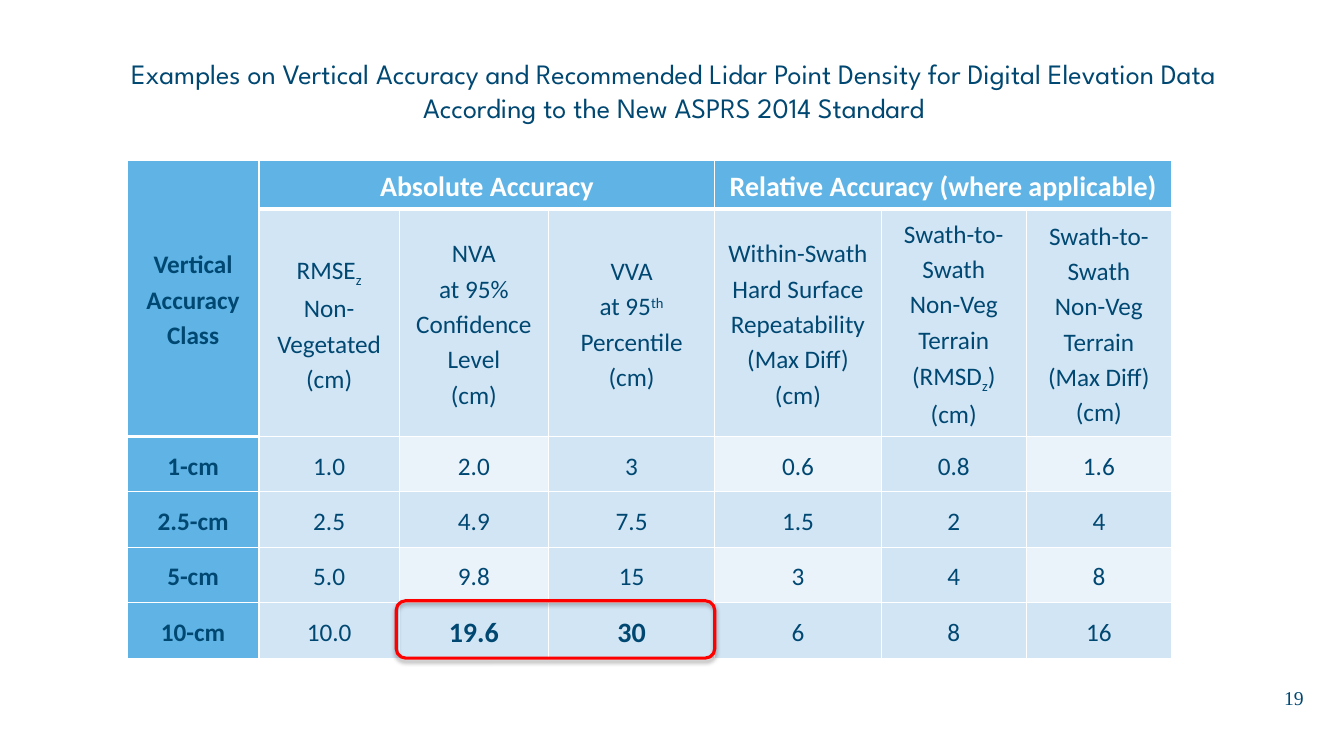
from lxml.etree import SubElement
from pptx import Presentation
from pptx.dml.color import RGBColor
from pptx.enum.shapes import MSO_SHAPE
from pptx.enum.text import MSO_ANCHOR, MSO_AUTO_SIZE, PP_ALIGN
from pptx.oxml.ns import qn
from pptx.util import Inches, Pt

COLORS = {"navy": "004872", "blue": "5FB4E5", "pale": "D2E5F5",
          "paler": "EAF2FA", "white": "FFFFFF", "red": "FF0000", "black": "000000"}

COL_WIDTHS = [1.31, 1.39, 1.48, 1.65, 1.65, 1.44, 1.44]
ROW_HEIGHTS = [0.48, 2.26] + [0.55] * 4
GROUPS = {1: "Absolute Accuracy", 4: "Relative Accuracy (where applicable)"}
# Within a heading, "|" splits runs; "_" starts a subscript and "^" a superscript
HEADINGS = [
    ["RMSE|_z", "Non-Vegetated", "(cm)"],
    ["NVA", "at 95%", "Confidence Level", "(cm)"],
    ["VVA", "at 95|^th| Percentile", "(cm)"],
    ["Within-Swath", "Hard Surface Repeatability", "(Max Diff)", "(cm)"],
    ["Swath-to-Swath", "Non-Veg Terrain", "(RMSD|_z|)", "(cm)"],
    ["Swath-to-Swath", "Non-Veg Terrain", "(Max Diff)", "(cm)"],
]
VALUES = [
    ["1-cm", "1.0", "2.0", "3", "0.6", "0.8", "1.6"],
    ["2.5-cm", "2.5", "4.9", "7.5", "1.5", "2", "4"],
    ["5-cm", "5.0", "9.8", "15", "3", "4", "8"],
    ["10-cm", "10.0", "19.6", "30", "6", "8", "16"],
]
HIGHLIGHTS = {"19.6", "30"}
BASELINES = {"_": "-25000", "^": "30000"}


def rgb(name):
    return RGBColor.from_string(COLORS[name])


class SlideBuilder:
    def __init__(self, prs):
        self.s = prs.slides.add_slide(prs.slide_layouts[5])

    def style(self, r, size, font="Calibri", color="navy", bold=False):
        r.font.size, r.font.name, r.font.bold = Pt(size), font, bold
        r.font.color.rgb = rgb(color)

    def title(self, text, x, y, w, h):
        sp = self.s.shapes.title
        sp.left, sp.top, sp.width, sp.height = map(Inches, (x, y, w, h))
        tf = sp.text_frame
        tf.text = text
        tf.word_wrap, tf.auto_size = True, MSO_AUTO_SIZE.NONE
        tf.vertical_anchor = MSO_ANCHOR.TOP
        p = tf.paragraphs[0]
        p.alignment = PP_ALIGN.CENTER
        self.style(p.runs[0], 20, "League Spartan")

    def page_number(self, text, x, y, w, h):
        tf = self.s.shapes.add_textbox(*map(Inches, (x, y, w, h))).text_frame
        tf.text = text
        tf.word_wrap, tf.vertical_anchor = False, MSO_ANCHOR.MIDDLE
        p = tf.paragraphs[0]
        p.alignment = PP_ALIGN.RIGHT
        self.style(p.runs[0], 14, "Times New Roman")

    def table(self, x, y, widths, heights):
        frame = self.s.shapes.add_table(len(heights), len(widths), Inches(x), Inches(y),
                                        Inches(sum(widths)), Inches(sum(heights)))
        tbl = frame.table
        tbl.first_row = tbl.horz_banding = False
        for col, width in zip(tbl.columns, widths):
            col.width = Inches(width)
        for row, height in zip(tbl.rows, heights):
            row.height = Inches(height)
        return tbl

    def cell_frame(self, cell, fill, top=1, bottom=1):
        cell.margin_left = cell.margin_right = Inches(0.07)
        cell.margin_top = cell.margin_bottom = 0
        cell.vertical_anchor = MSO_ANCHOR.MIDDLE
        tcPr = cell._tc.get_or_add_tcPr()
        for side, width in (("L", 1), ("R", 1), ("T", top), ("B", bottom)):
            ln = SubElement(tcPr, qn(f"a:ln{side}"), w=str(Pt(width)))
            SubElement(SubElement(ln, qn("a:solidFill")), qn("a:srgbClr"), val=COLORS["white"])
        cell.fill.solid()
        cell.fill.fore_color.rgb = rgb(fill)

    def cell_text(self, cell, lines, size=18, color="navy", bold=False):
        tf = cell.text_frame
        for i, line in enumerate(lines):
            p = tf.paragraphs[0] if i == 0 else tf.add_paragraph()
            p.alignment, p.line_spacing = PP_ALIGN.CENTER, 1.15
            for part in line.split("|"):
                r = p.add_run()
                r.text = part.lstrip("_^")
                self.style(r, size, color=color, bold=bold)
                if part[0] in BASELINES:
                    r.font._element.set("baseline", BASELINES[part[0]])

    def highlight_box(self, x, y, w, h):
        sp = self.s.shapes.add_shape(MSO_SHAPE.ROUNDED_RECTANGLE, *map(Inches, (x, y, w, h)))
        sp.fill.background()
        sp.line.color.rgb, sp.line.width = rgb("red"), Pt(2.25)
        sp.shadow.inherit = False
        effects = sp._element.spPr.find(qn("a:effectLst"))
        shadow = SubElement(effects, qn("a:outerShdw"), blurRad=str(Pt(3.1)),
                            dist=str(Pt(1.8)), dir="5400000", rotWithShape="0")
        clr = SubElement(shadow, qn("a:srgbClr"), val=COLORS["black"])
        SubElement(clr, qn("a:alpha"), val="35000")


def main():
    prs = Presentation()
    prs.slide_width, prs.slide_height = Inches(13.33), Inches(7.5)
    b = SlideBuilder(prs)
    b.title("Examples on Vertical Accuracy and Recommended Lidar Point Density for Digital "
            "Elevation Data According to the New ASPRS 2014 Standard", 0.68, 0.51, 12.01, 1.08)
    b.page_number("19", 12.53, 6.67, 0.5, 0.5)

    # Cell fills and borders: thick rules close the header cells
    tbl = b.table(1.26, 1.59, COL_WIDTHS, ROW_HEIGHTS)
    for row in range(len(ROW_HEIGHTS)):
        for col in range(len(COL_WIDTHS)):
            last_header = 1 if col == 0 else 0
            if col == 0 or row == 0:
                fill = "blue"
            else:
                fill = "paler" if row in (2, 4) and col in (2, 4, 6) else "pale"
            b.cell_frame(tbl.cell(row, col), fill,
                         top=3 if row == last_header + 1 else 1,
                         bottom=3 if row == last_header else 1)

    # Headings
    tbl.cell(0, 0).merge(tbl.cell(1, 0))
    b.cell_text(tbl.cell(0, 0), ["Vertical Accuracy Class"], bold=True)
    for col, text in GROUPS.items():
        tbl.cell(0, col).merge(tbl.cell(0, col + 2))
        b.cell_text(tbl.cell(0, col), [text], 20, "white", True)
    for col, lines in enumerate(HEADINGS, 1):
        b.cell_text(tbl.cell(1, col), lines)

    # Values
    for row, values in enumerate(VALUES, 2):
        for col, text in enumerate(values):
            big = text in HIGHLIGHTS
            b.cell_text(tbl.cell(row, col), [text], 20 if big else 18, bold=big or col == 0)

    # Frame around the highlighted values
    b.highlight_box(3.93, 5.96, 3.16, 0.57)
    prs.save("out.pptx")


if __name__ == "__main__":
    main()
